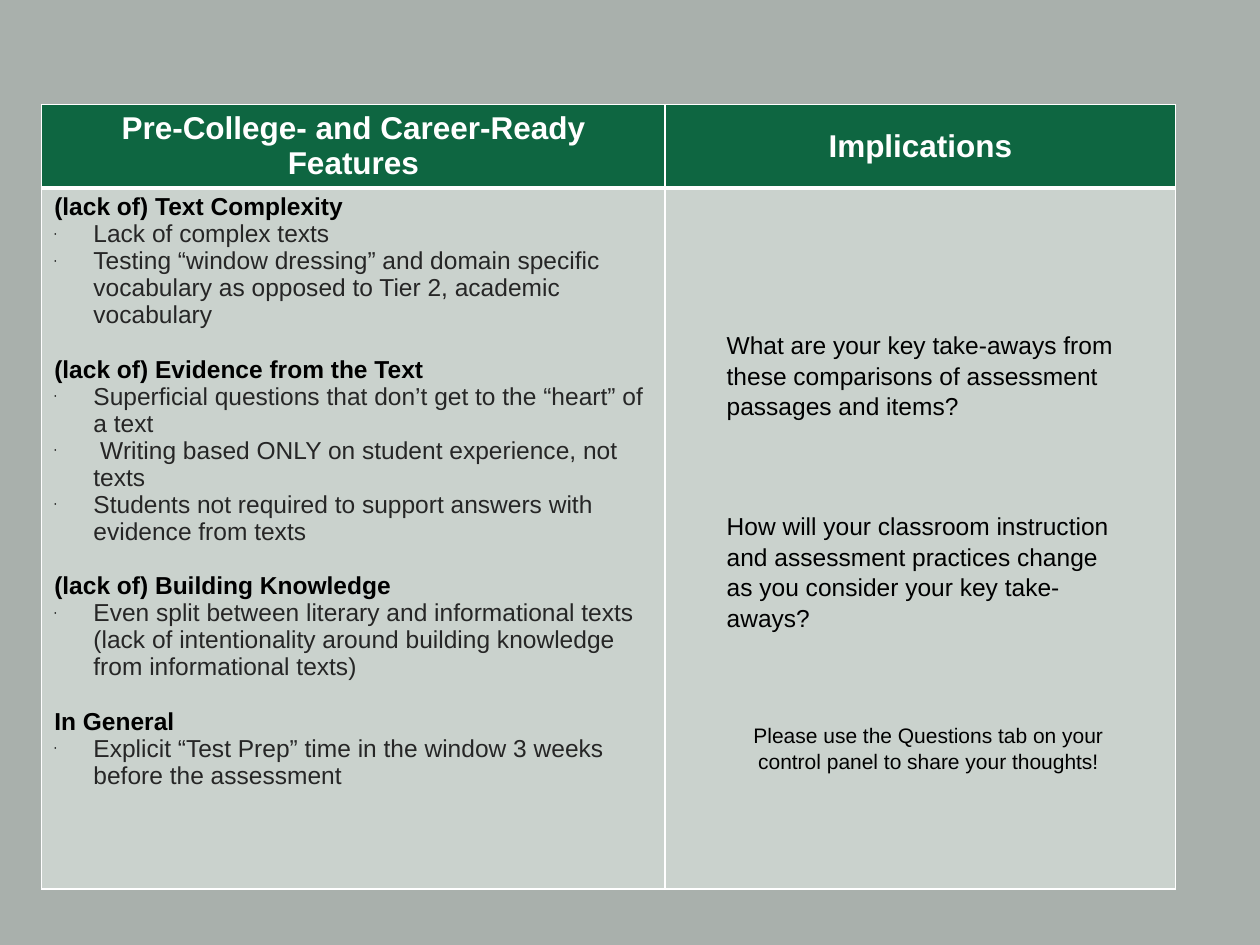
import dataclasses

import pptx
import pptx.dml.color
import pptx.enum.text
import pptx.oxml.ns
import pptx.util
from lxml import etree

Cm = pptx.util.Cm
Pt = pptx.util.Pt
ALIGN = pptx.enum.text.PP_ALIGN
ANCHOR = pptx.enum.text.MSO_ANCHOR


@dataclasses.dataclass(frozen=True)
class Theme:
    """Colours, font and type sizes of the slide."""
    font: str = "Arial"
    backdrop: str = "A9B0AC"
    header: str = "0E6641"
    body: str = "CAD2CD"
    white: str = "FFFFFF"
    black: str = "000000"
    detail: str = "262626"
    header_size: int = 18
    text_size: int = 14
    note_size: int = 12


THEME = Theme()
HEADINGS = ["Pre-College- and Career-Ready Features", "Implications"]
FEATURES = [
    ("(lack of) Text Complexity", [
        "Lack of complex texts",
        "Testing “window dressing” and domain specific vocabulary as opposed to Tier 2, academic vocabulary",
    ]),
    ("(lack of) Evidence from the Text", [
        "Superficial questions that don’t get to the “heart” of a text",
        " Writing based ONLY on student experience, not texts",
        "Students not required to support answers with evidence from texts",
    ]),
    ("(lack of) Building Knowledge", [
        "Even split between literary and informational texts (lack of intentionality "
        "around building knowledge from informational texts)",
    ]),
    ("In General", [
        "Explicit “Test Prep” time in the window 3 weeks before the assessment",
    ]),
]
QUESTIONS = [
    "What are your key take-aways from these comparisons of assessment passages and items?",
    "How will your classroom instruction and assessment practices change as you consider your key take-aways?",
]
NOTE = "Please use the Questions tab on your control panel to share your thoughts!"


def rgb(value):
    """Return the colour for a hex value."""
    return pptx.dml.color.RGBColor.from_string(value)


def add_element(parent, tag, **attributes):
    """Append a drawing element to a parent element."""
    return etree.SubElement(parent, pptx.oxml.ns.qn(tag), attributes)


def add_span(para, text, size, color, bold=False):
    """Add one formatted run to a paragraph."""
    span = para.add_run()
    span.text = text
    span.font.name = THEME.font
    span.font.size = Pt(size)
    span.font.bold = bold
    span.font.color.rgb = rgb(color)


def next_para(frame):
    """Return the unused first paragraph or a new one."""
    first = frame.paragraphs[0]
    return frame.add_paragraph() if first.runs else first


def add_bullet(para):
    """Give a paragraph a small black bullet with a hanging indent."""
    properties = para._p.get_or_add_pPr()
    properties.set("marL", str(Cm(0.79)))
    properties.set("indent", str(-Cm(0.79)))
    add_element(add_element(properties, "a:buClr"), "a:srgbClr", val=THEME.black)
    add_element(properties, "a:buSzPct", val="25000")
    add_element(properties, "a:buFont", typeface=THEME.font)
    add_element(properties, "a:buChar", char="•")


def style_cell(cell, fill, bottom_width):
    """Set the white borders and the fill of a table cell."""
    properties = cell._tc.get_or_add_tcPr()
    for side, width in (("L", 1), ("R", 1), ("T", 1), ("B", bottom_width)):
        line = add_element(properties, f"a:ln{side}", w=str(Pt(width)))
        add_element(add_element(line, "a:solidFill"), "a:srgbClr", val=THEME.white)
    cell.fill.solid()
    cell.fill.fore_color.rgb = rgb(fill)


def fill_features(frame):
    """Write the feature groups with their bullets."""
    for index, (title, details) in enumerate(FEATURES):
        para = next_para(frame)
        para.line_spacing = 0.98
        if index:
            para.space_before = Pt(15.75)
        add_span(para, title, THEME.text_size, THEME.black, True)
        for detail in details:
            para = next_para(frame)
            add_bullet(para)
            para.line_spacing = 0.98
            add_span(para, detail, THEME.text_size, THEME.detail)


def add_comparison(page):
    """Add the table of features and implications."""
    table = page.shapes.add_table(2, 2, Cm(0.84), Cm(2.11), Cm(22.86), Cm(15.78)).table
    table.horz_banding = False
    for column, width in zip(table.columns, (12.57, 10.29)):
        column.width = Cm(width)
    for row, height in zip(table.rows, (1.65, 14.13)):
        row.height = Cm(height)
    for index, heading in enumerate(HEADINGS):
        top, bottom = table.cell(0, index), table.cell(1, index)
        style_cell(top, THEME.header, 3)
        style_cell(bottom, THEME.body, 1)
        top.vertical_anchor = ANCHOR.MIDDLE
        para = top.text_frame.paragraphs[0]
        para.alignment = ALIGN.CENTER
        add_span(para, heading, THEME.header_size, THEME.white, True)
    fill_features(table.cell(1, 0).text_frame)


def add_questions(page):
    """Add the reflection questions and the closing note."""
    box = page.shapes.add_textbox(Cm(14.4), Cm(5.77), Cm(8.64), Cm(10.26))
    frame = box.text_frame
    frame.word_wrap = True
    frame.margin_left = frame.margin_right = frame.margin_bottom = Cm(0.25)
    frame.margin_top = Cm(0.85)
    entries = [(text, THEME.text_size, ALIGN.LEFT) for text in QUESTIONS]
    entries.append((NOTE, THEME.note_size, ALIGN.CENTER))
    for index, (text, size, alignment) in enumerate(entries):
        para = next_para(frame)
        para.alignment = alignment
        para.line_spacing = 1.05
        if index:
            para.space_before = Pt(50.5)
        add_span(para, text, size, THEME.black)


def main():
    """Build and save the slide."""
    deck = pptx.Presentation()
    deck.slide_width, deck.slide_height = Cm(25.4), Cm(19.05)
    page = deck.slides.add_slide(deck.slide_layouts[6])
    page.background.fill.solid()
    page.background.fill.fore_color.rgb = rgb(THEME.backdrop)
    add_comparison(page)
    add_questions(page)
    deck.save("out.pptx")


if __name__ == "__main__":
    main()
